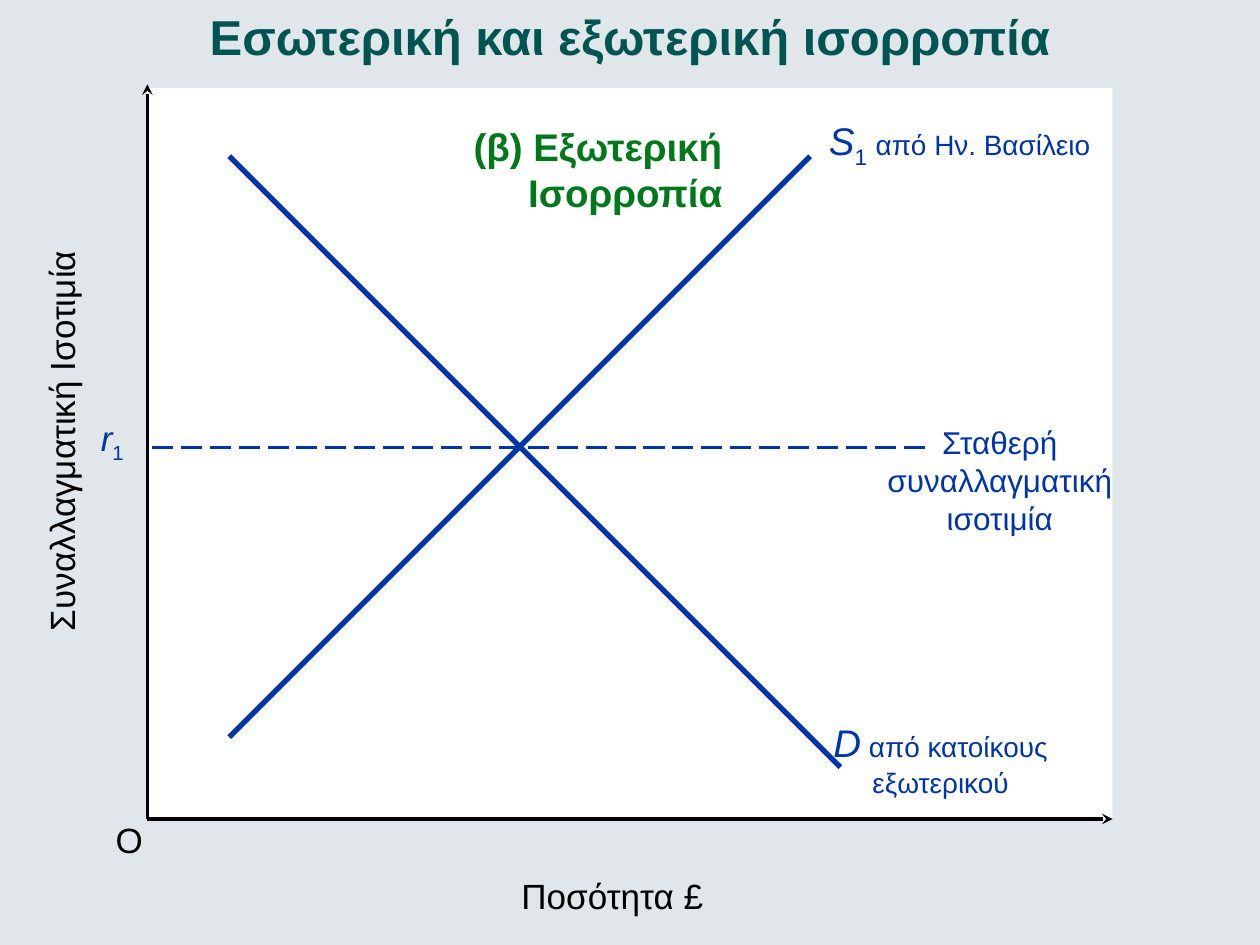
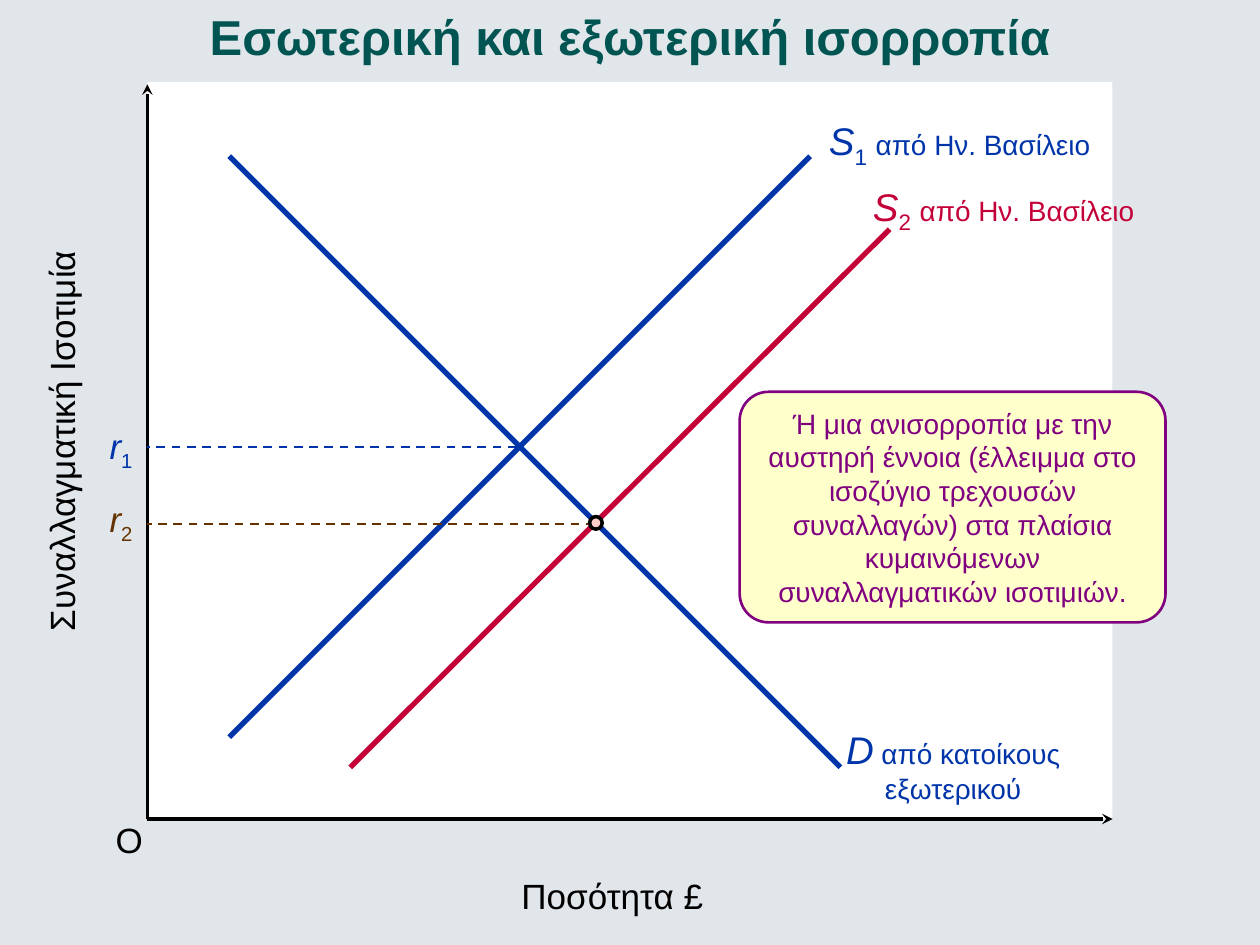
"""Build two slides on internal and external balance in the currency market."""
from lxml import etree
from pptx import Presentation
from pptx.dml.color import RGBColor
from pptx.enum import dml, shapes, text
from pptx.oxml import ns
from pptx.util import Inches, Pt

COLOURS = {
    "background": "E0E6EA", "plot": "FFFFFF", "axis": "000000", "title": "005452",
    "curve": "0035AA", "shifted": "C40038", "new_rate": "663300", "heading": "01791B",
    "note": "800080", "note_fill": "FFFFCC", "point": "FFCCCC",
}
FONT = "Arial"
LEFT, RIGHT, BOTTOM = 1.17, 8.83, 6.5
RATE_1, RATE_2 = 3.55, 4.16
CENTER, END = text.PP_ALIGN.CENTER, text.PP_ALIGN.RIGHT


def colour(name):
    """Return the named colour."""
    return RGBColor.from_string(COLOURS[name])


def add_child(parent, tag, **attributes):
    """Append a DrawingML element."""
    return etree.SubElement(parent, ns.qn(tag), attributes)


def add_run(paragraph, content, ink, size, bold=False, italic=False, subscript=False, shadow=False):
    """Write one run, turning newlines into line breaks."""
    for index, line in enumerate(content.split("\n")):
        if index:
            paragraph.add_line_break()
        run = paragraph.add_run()
        run.text = line
        font = run.font
        font.name, font.size, font.bold, font.italic = FONT, Pt(size), bold, italic
        font.color.rgb = colour(ink)
        properties = run._r.get_or_add_rPr()
        if subscript:
            properties.set("baseline", "-25000")
        if shadow:
            effects = etree.Element(ns.qn("a:effectLst"))
            cast = add_child(effects, "a:outerShdw", dist="35921", dir="2700000")
            add_child(cast, "a:srgbClr", val=COLOURS["axis"])
            properties.find(ns.qn("a:solidFill")).addnext(effects)


def add_text(slide, content, place, ink="axis", size=20, align=None, wrap=False, rotation=0, **style):
    """Add a text box from a string or a list of (text, format) runs."""
    box = slide.shapes.add_textbox(*map(Inches, place))
    box.rotation = rotation
    frame = box.text_frame
    frame.word_wrap = wrap
    frame.auto_size = text.MSO_AUTO_SIZE.SHAPE_TO_FIT_TEXT
    paragraph = frame.paragraphs[0]
    paragraph.alignment = align
    runs = [(content, {})] if isinstance(content, str) else content
    for words, changes in runs:
        add_run(paragraph, words, **{"ink": ink, "size": size, **style, **changes})


def add_line(slide, start, end, ink, width, dash=None, arrow=False):
    """Add a straight line, optionally dashed or with an arrowhead."""
    line = slide.shapes.add_connector(shapes.MSO_CONNECTOR.STRAIGHT, *map(Inches, (*start, *end)))
    line.line.color.rgb = colour(ink)
    line.line.width = Pt(width)
    if dash:
        line.line.dash_style = dash
    if arrow:
        add_child(line.line._get_or_add_ln(), "a:tailEnd", type="stealth")
    add_child(line._element.spPr, "a:effectLst")


def add_shape(slide, kind, place, fill, outline=None, width=0):
    """Add a filled preset shape."""
    shape = slide.shapes.add_shape(kind, *map(Inches, place))
    shape.shadow.inherit = False
    shape.fill.solid()
    shape.fill.fore_color.rgb = colour(fill)
    if outline:
        shape.line.color.rgb = colour(outline)
        shape.line.width = Pt(width)
    else:
        shape.line.fill.background()
    return shape


def add_supply_label(slide, number, place, ink="curve"):
    """Label a supply curve."""
    runs = [("S", {"italic": True}), (number, {"subscript": True}),
            (" ", {"size": 18}), ("από Ην. Βασίλειο", {"size": 16})]
    add_text(slide, runs, place, ink=ink, size=22)


def add_demand_label(slide, left, top):
    """Label the demand curve."""
    runs = [("D", {"size": 22, "italic": True}), (" από κατοίκους\nεξωτερικού", {})]
    add_text(slide, runs, (left, top, 1.93, 0.74), ink="curve", size=16, align=CENTER)


def add_rate(slide, number, height, end, label_at, ink="curve", width=1.25, dash=dml.MSO_LINE.DASH):
    """Add an exchange-rate guide line and its label."""
    add_line(slide, (end, height), (LEFT, height), ink, width, dash)
    runs = [("r", {"italic": True}), (number, {"subscript": True})]
    add_text(slide, runs, (*label_at, 0.39, 0.43), ink=ink, align=END)


def add_market(presentation, plot_top):
    """Start a slide with title, axes, and the first supply and demand curves."""
    slide = presentation.slides.add_slide(presentation.slide_layouts[6])
    slide.background.fill.solid()
    slide.background.fill.fore_color.rgb = colour("background")
    plot = (LEFT, plot_top, RIGHT - LEFT, BOTTOM - plot_top)
    add_shape(slide, shapes.MSO_SHAPE.RECTANGLE, plot, "plot")
    for tip in ((LEFT, 0.67), (RIGHT, BOTTOM)):
        add_line(slide, (LEFT, BOTTOM), tip, "axis", 2, arrow=True)
    add_text(slide, "O", (0.82, 6.45, 0.42, 0.43))
    add_text(slide, "Συναλλαγματική Ισοτιμία", (-1.16, 3.28, 3.3, 0.44), align=CENTER, rotation=270)
    add_text(slide, "Ποσότητα £", (4.03, 6.89, 1.66, 0.44), align=CENTER)
    add_text(slide, "Εσωτερική και εξωτερική ισορροπία", (0, 0, 10, 0.57), ink="title",
             size=28, align=CENTER, wrap=True, bold=True, shadow=True)
    add_line(slide, (1.82, 5.85), (6.43, 1.24), "curve", 3)
    add_line(slide, (1.82, 1.24), (6.67, 6.09), "curve", 3)
    add_supply_label(slide, "1", (6.48, 0.88, 2.28, 0.47))
    return slide


def add_note(slide, content, place):
    """Add a rounded comment box."""
    note = add_shape(slide, shapes.MSO_SHAPE.ROUNDED_RECTANGLE, place, "note_fill", "note", 1.5)
    note.adjustments[0] = 0.125
    frame = note.text_frame
    frame.word_wrap = True
    frame.vertical_anchor = text.MSO_ANCHOR.MIDDLE
    frame.margin_left = frame.margin_right = Inches(0.06)
    frame.margin_top = frame.margin_bottom = Inches(0.04)
    paragraph = frame.paragraphs[0]
    paragraph.alignment = CENTER
    add_run(paragraph, content, "note", 16)


def build_fixed_rate(presentation):
    """Build the slide on external balance at a fixed rate."""
    slide = add_market(presentation, 0.7)
    add_demand_label(slide, 6.5, 5.66)
    add_rate(slide, "1", RATE_1, 7.34, (0.69, 3.26), width=1.5, dash=dml.MSO_LINE.LONG_DASH)
    add_text(slide, "(β) Εξωτερική\nΙσορροπία", (2.34, 0.93, 3.49, 0.8), ink="heading",
             size=22, align=END, wrap=True, bold=True)
    add_text(slide, "Σταθερή\nσυναλλαγματική\nισοτιμία", (6.92, 3.31, 2.03, 1.01),
             ink="curve", size=18, align=CENTER)


def build_floating_rate(presentation):
    """Build the slide on a supply shift under floating rates."""
    slide = add_market(presentation, 0.65)
    add_demand_label(slide, 6.6, 5.71)
    add_rate(slide, "1", RATE_1, 4.1, (0.76, 3.32))
    add_line(slide, (2.78, 6.09), (7.06, 1.82), "shifted", 3)
    add_supply_label(slide, "2", (6.83, 1.4, 2.37, 0.47), ink="shifted")
    add_rate(slide, "2", RATE_2, 4.72, (0.76, 3.9), ink="new_rate")
    add_note(slide, "Ή μια ανισορροπία με την αυστηρή έννοια (έλλειμμα στο ισοζύγιο τρεχουσών "
             "συναλλαγών) στα πλαίσια κυμαινόμενων συναλλαγματικών ισοτιμιών.",
             (5.87, 3.11, 3.38, 1.83))
    add_shape(slide, shapes.MSO_SHAPE.OVAL, (4.68, 4.1, 0.1, 0.1), "point", "axis", 2)


def main():
    """Create and save the presentation."""
    presentation = Presentation()
    presentation.slide_width, presentation.slide_height = Inches(10), Inches(7.5)
    build_fixed_rate(presentation)
    build_floating_rate(presentation)
    presentation.save("out.pptx")


if __name__ == "__main__":
    main()
